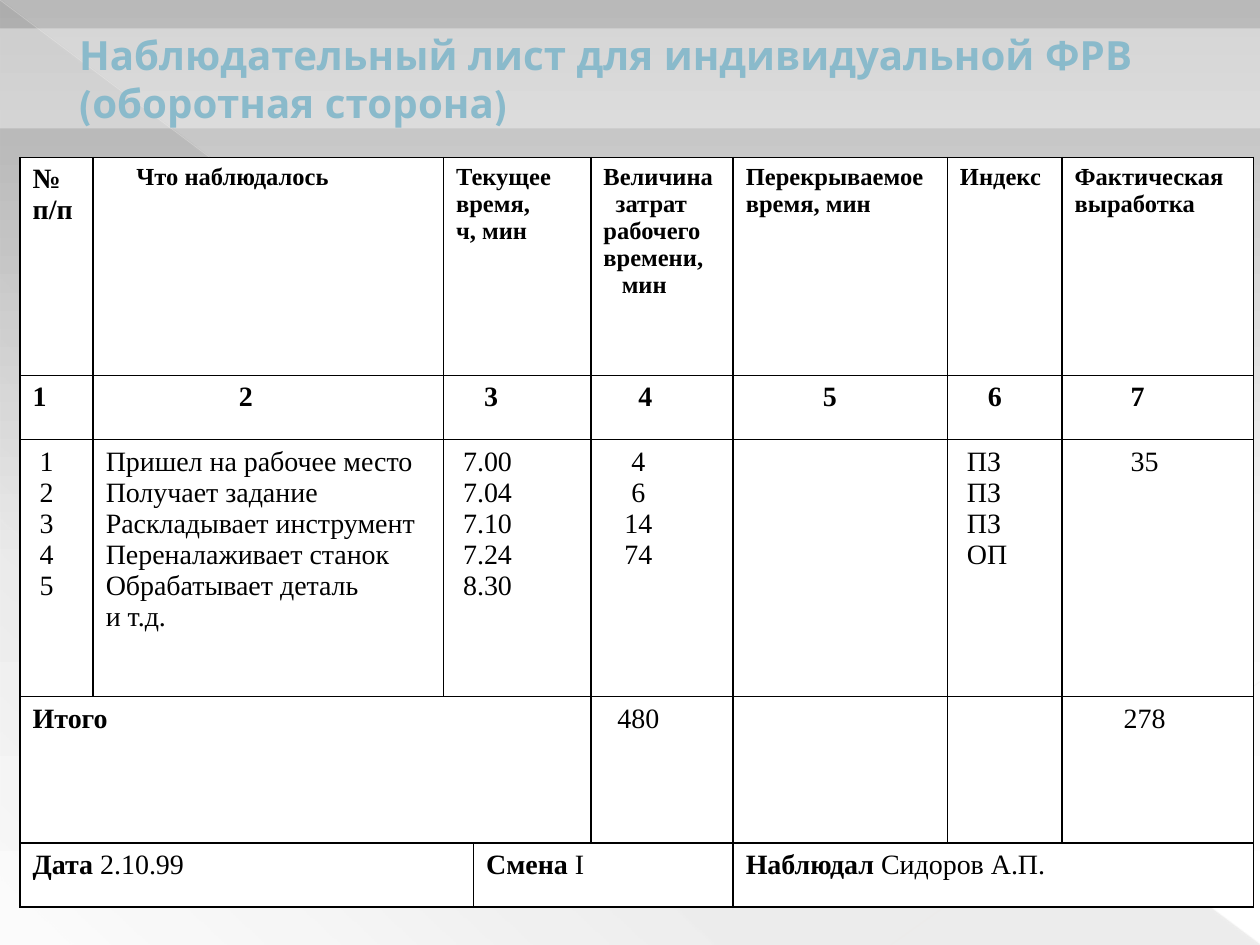
from lxml import etree
from pptx import Presentation
from pptx import util as u
from pptx.dml.color import RGBColor
from pptx.enum import shapes, text
from pptx.oxml.ns import qn

WIDTH, HEIGHT = 10, 7.5
COLORS = {"black": "000000", "white": "FFFFFF", "title": "8ABACB", "shade": "3B3B3B",
          "sky": "B9B9B9", "mist": "F6F6F6", "ray": "EAE8E6", "edge": "ECEAE8"}
TABLE_FONT, TITLE_FONT = "Times New Roman", "League Spartan"
COLUMNS = [0.58, 2.78, 0.14, 0.93, 1.13, 1.7, 0.91, 1.52]
ROWS = [1.73, 0.51, 2.04, 1.16, 0.51]
MERGES = [(0, 2, 3), (1, 2, 3), (2, 2, 3), (3, 0, 3), (4, 0, 2), (4, 3, 4), (4, 5, 7)]
FIELDS = [0, 1, 2, 4, 5, 6, 7]
HEADERS = [["№", "п/п"], ["Что наблюдалось"], ["Текущее", "время,", "ч, мин"],
           ["Величина", "затрат", "рабочего", "времени,", "мин"],
           ["Перекрываемое", "время, мин"], ["Индекс"], ["Фактическая", "выработка"]]
HEADER_INDENTS = {1: [5], 3: [0, 2, 0, 0, 3]}
NUMBER_INDENTS = [0, 19, 4, 5, 11, 4, 8]
OBSERVATIONS = {
    0: (["1", "2", "3", "4", "5"], [1]),
    1: (["Пришел на рабочее место", "Получает задание", "Раскладывает инструмент",
         "Переналаживает станок", "Обрабатывает деталь", "и т.д."], [0]),
    2: (["7.00", "7.04", "7.10", "7.24", "8.30"], [1]),
    4: (["4", "6", "14", "74"], [4, 4, 3, 3]),
    6: (["ПЗ", "ПЗ", "ПЗ", "ОП"], [1]),
    7: (["35"], [8]),
}
FOOTER = {0: ("Дата", " 2.10.99"), 3: ("Смена ", "I"), 5: ("Наблюдал ", "Сидоров А.П.")}


def box(left, top, width, height):
    """Turn shares of the slide into a position and a size."""
    return (u.Inches(left * WIDTH), u.Inches(top * HEIGHT),
            u.Inches(width * WIDTH), u.Inches(height * HEIGHT))


def set_alpha(color_element, percent):
    """Give a colour element an opacity in percent."""
    etree.SubElement(color_element, qn("a:alpha")).set("val", str(percent * 1000))


def set_gradient(fill, owner, stops, angle):
    """Fill with linear gradient stops of position, colour name and opacity."""
    fill.gradient()
    gradient = next(owner.iter(qn("a:gradFill")))
    for child in list(gradient):
        gradient.remove(child)
    stop_list = etree.SubElement(gradient, qn("a:gsLst"))
    for position, color, opacity in stops:
        stop = etree.SubElement(stop_list, qn("a:gs"), pos=str(position * 1000))
        color_element = etree.SubElement(stop, qn("a:srgbClr"), val=COLORS[color])
        if opacity < 100:
            set_alpha(color_element, opacity)
    etree.SubElement(gradient, qn("a:lin"), ang=str(angle * 60000), scaled="0")


def add_plain_shape(slide, kind, place):
    """Add a preset shape without line and shadow."""
    shape = slide.shapes.add_shape(kind, *place)
    shape.shadow.inherit = False
    shape.line.fill.background()
    return shape


def add_ray(slide, start, end, color, width, opacity):
    """Add a thin translucent line between two points."""
    points = [u.Inches(value) for value in (*start, *end)]
    line = slide.shapes.add_connector(shapes.MSO_CONNECTOR.STRAIGHT, *points)
    line.line.color.rgb = RGBColor.from_string(COLORS[color])
    line.line.width = u.Pt(width)
    set_alpha(next(line.element.iter(qn("a:srgbClr"))), opacity)
    etree.SubElement(line.element.spPr, qn("a:effectLst"))


def add_background(slide):
    """Paint the backdrop with its shaded triangle and two rays."""
    set_gradient(slide.background.fill, slide.element,
                 [(0, "sky", 100), (60, "mist", 100), (100, "white", 100)], 90)
    triangle = add_plain_shape(slide, shapes.MSO_SHAPE.RIGHT_TRIANGLE, box(0, 0, 1, 1))
    set_gradient(triangle.fill, triangle.element,
                 [(0, "shade", 10), (70, "shade", 8), (100, "shade", 1)], 133)
    add_ray(slide, (0, 0), (WIDTH, HEIGHT), "ray", 0.39, 35)
    add_ray(slide, (WIDTH, 5.41), (7.07, HEIGHT), "edge", 0.47, 45)


def style_run(run, font, size, color, bold):
    """Set the typeface of a run."""
    run.font.name = font
    run.font.size = u.Pt(size)
    run.font.bold = bold
    run.font.color.rgb = RGBColor.from_string(COLORS[color])


def add_title(slide, title):
    """Add the translucent title band."""
    band = add_plain_shape(slide, shapes.MSO_SHAPE.RECTANGLE, box(0, 0.03, 1, 0.106))
    band.fill.solid()
    band.fill.fore_color.rgb = RGBColor.from_string(COLORS["white"])
    set_alpha(next(band.element.spPr.iter(qn("a:srgbClr"))), 40)
    frame = band.text_frame
    frame.word_wrap = True
    frame.vertical_anchor = text.MSO_ANCHOR.MIDDLE
    frame.text = title
    paragraph = frame.paragraphs[0]
    paragraph.alignment = text.PP_ALIGN.LEFT
    paragraph._p.get_or_add_pPr().set("marL", str(u.Inches(0.53)))
    style_run(paragraph.runs[0], TITLE_FONT, 23, "title", True)


def style_cell(cell):
    """Give a cell a white fill and black borders."""
    properties = cell._tc.get_or_add_tcPr()
    for side in ("lnL", "lnR", "lnT", "lnB"):
        border = etree.SubElement(properties, qn(f"a:{side}"), w=str(u.Pt(1)))
        fill = etree.SubElement(border, qn("a:solidFill"))
        etree.SubElement(fill, qn("a:srgbClr"), val=COLORS["black"])
    cell.fill.solid()
    cell.fill.fore_color.rgb = RGBColor.from_string(COLORS["white"])


def write_cell(cell, lines, indents=(0,), size=16, bold=False, justified=False):
    """Write lines, each indented by a number of quarter-em steps."""
    cell.text_frame.text = "\n".join(lines)
    for index, paragraph in enumerate(cell.text_frame.paragraphs):
        steps = indents[index % len(indents)]
        if steps:
            paragraph._p.get_or_add_pPr().set("marL", str(u.Pt(steps * size / 4)))
        if justified:
            paragraph.alignment = text.PP_ALIGN.JUSTIFY
        style_run(paragraph.runs[0], TABLE_FONT, size, "black", bold)


def add_sheet(slide):
    """Add the empty observation grid and return its table."""
    place = box(0.016, 1.25 / HEIGHT, sum(COLUMNS) / WIDTH, sum(ROWS) / HEIGHT)
    table = slide.shapes.add_table(len(ROWS), len(COLUMNS), *place).table
    table.first_row = table.horz_banding = False
    for column, width in zip(table.columns, COLUMNS):
        column.width = u.Inches(width)
    for row, height in zip(table.rows, ROWS):
        row.height = u.Inches(height)
    for cell in table.iter_cells():
        style_cell(cell)
    for row, first, last in MERGES:
        table.cell(row, first).merge(table.cell(row, last))
    return table


def fill_sheet(table):
    """Write headings, observations, totals and signatures."""
    for index, column in enumerate(FIELDS):
        write_cell(table.cell(0, column), HEADERS[index], HEADER_INDENTS.get(index, [0]),
                   14 if index else 16, True, column == 2)
        write_cell(table.cell(1, column), [str(index + 1)], [NUMBER_INDENTS[index]], bold=True)
    for column, (lines, indents) in OBSERVATIONS.items():
        write_cell(table.cell(2, column), lines, indents, justified=column == 4)
    write_cell(table.cell(3, 0), ["Итого"], bold=True)
    write_cell(table.cell(3, 4), ["480"], [2])
    write_cell(table.cell(3, 7), ["278"], [7])
    for column, (label, value) in FOOTER.items():
        cell = table.cell(4, column)
        write_cell(cell, [label], bold=True)
        run = cell.text_frame.paragraphs[0].add_run()
        run.text = value
        style_run(run, TABLE_FONT, 16, "black", False)


def main():
    """Build the slide and save it."""
    presentation = Presentation()
    presentation.slide_width, presentation.slide_height = u.Inches(WIDTH), u.Inches(HEIGHT)
    slide = presentation.slides.add_slide(presentation.slide_layouts[6])
    add_background(slide)
    fill_sheet(add_sheet(slide))
    add_title(slide, "Наблюдательный лист для индивидуальной ФРВ (оборотная сторона)")
    presentation.save("out.pptx")


if __name__ == "__main__":
    main()
